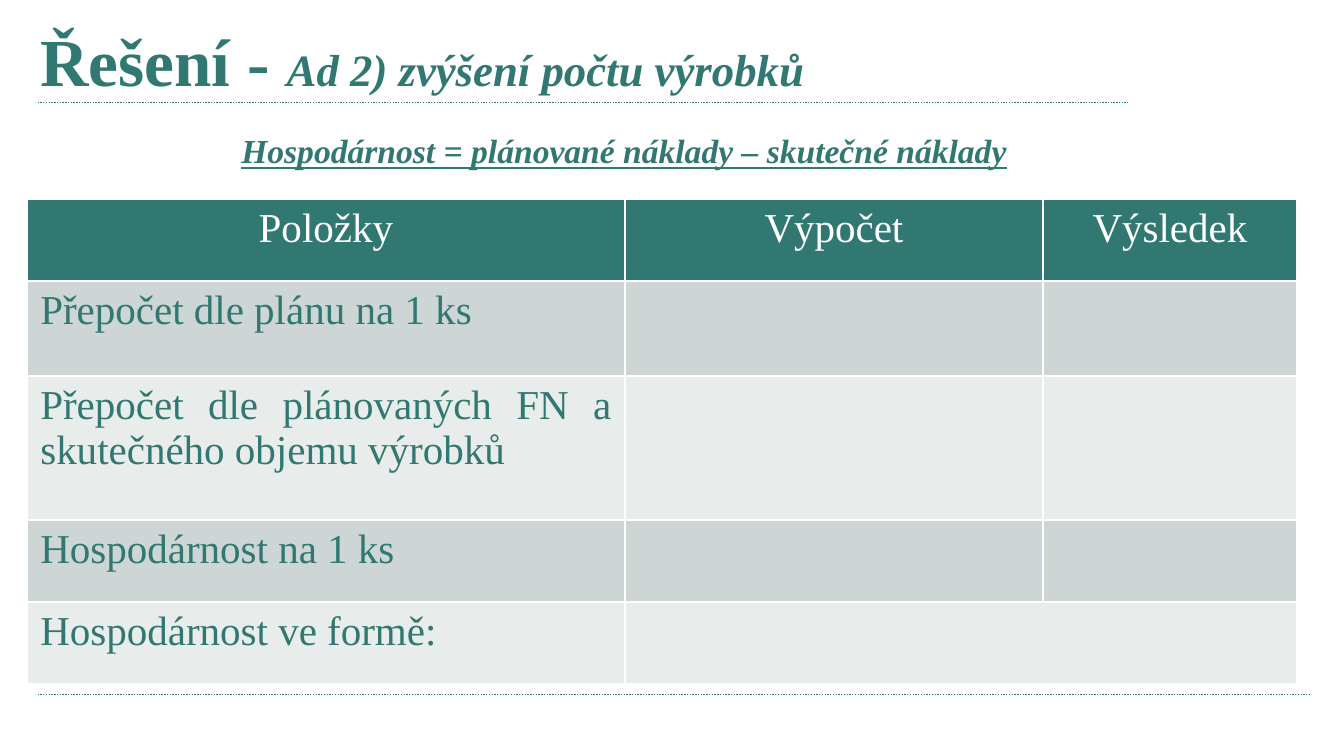
from dataclasses import dataclass

from lxml import etree
from pptx import Presentation
from pptx.dml.color import RGBColor
from pptx.enum.dml import MSO_LINE
from pptx.enum.shapes import MSO_CONNECTOR
from pptx.enum.text import MSO_ANCHOR, PP_ALIGN
from pptx.oxml.ns import qn
from pptx.util import Emu, Pt

DOTS = MSO_LINE.ROUND_DOT
STRAIGHT = MSO_CONNECTOR.STRAIGHT
MIDDLE = MSO_ANCHOR.MIDDLE
LEFT, CENTER, JUST = PP_ALIGN.LEFT, PP_ALIGN.CENTER, PP_ALIGN.JUSTIFY
SCALE = 4572


@dataclass(frozen=True)
class Theme:
    """Colours, font and type sizes of the slide."""
    font: str = "Times New Roman"
    teal: str = "307871"
    white: str = "FFFFFF"
    bands: tuple = ("CDD6D5", "E8ECEB")
    title: int = 36
    sub: int = 24
    note: int = 18
    cell: int = 22


THEME = Theme()
COLS = (890, 622, 378)
ROWS = (122, 142, 214, 122, 122)
HEADS = ("Položky", "Výpočet", "Výsledek")
ITEMS = (
    ("Přepočet dle plánu na 1 ks", JUST),
    ("Přepočet dle plánovaných FN a skutečného objemu výrobků", JUST),
    ("Hospodárnost na 1 ks", LEFT),
    ("Hospodárnost ve formě:", LEFT),
)


def px(num):
    """Turn px into EMU."""
    return Emu(num * SCALE)


def rgb(code):
    """Turn a hex code into a colour."""
    return RGBColor.from_string(code)


def write(para, text, size, color=THEME.teal, align=LEFT,
          bold=False, italic=False, under=False):
    """Add a formatted run to a paragraph."""
    para.alignment = align
    run = para.add_run()
    run.text = text
    font = run.font
    font.name, font.size = THEME.font, Pt(size)
    font.bold, font.italic, font.underline = bold, italic, under
    font.color.rgb = rgb(color)


def rule(slide, left, right, top):
    """Draw a dotted horizontal rule."""
    line = slide.shapes.add_connector(
        STRAIGHT, px(left), px(top), px(right), px(top))
    line.line.color.rgb = rgb(THEME.teal)
    line.line.width = Pt(0.75)
    line.line.dash_style = DOTS
    etree.SubElement(line._element.spPr, qn("a:effectLst"))


def head(slide):
    """Fill the title placeholder."""
    box = slide.shapes.title
    box.left, box.top, box.width, box.height = map(px, (40, 20, 1764, 158))
    frame = box.text_frame
    frame.vertical_anchor = MIDDLE
    frame.margin_bottom = px(30)
    para = frame.paragraphs[0]
    write(para, "Řešení - ", THEME.title, bold=True)
    write(para, "Ad 2) zvýšení počtu výrobků", THEME.sub,
          bold=True, italic=True)


def note(slide):
    """Add the formula under the title."""
    box = slide.shapes.add_textbox(*map(px, (86, 184, 1686, 80)))
    frame = box.text_frame
    frame.word_wrap = True
    frame.vertical_anchor = MIDDLE
    write(frame.paragraphs[0],
          "Hospodárnost = plánované náklady – skutečné náklady",
          THEME.note, align=CENTER, bold=True, italic=True, under=True)


def paint(cell, color):
    """Give a cell white borders and a fill."""
    props = cell._tc.get_or_add_tcPr()
    for side in ("lnL", "lnR", "lnT", "lnB"):
        edge = etree.SubElement(props, qn(f"a:{side}"), w=str(Pt(1)))
        fill = etree.SubElement(edge, qn("a:solidFill"))
        etree.SubElement(fill, qn("a:srgbClr"), val=THEME.white)
    cell.fill.solid()
    cell.fill.fore_color.rgb = rgb(color)


def grid(slide):
    """Build the table of items."""
    table = slide.shapes.add_table(
        len(ROWS), len(COLS), px(40), px(296),
        px(sum(COLS)), px(sum(ROWS))).table
    for col, width in zip(table.columns, COLS):
        col.width = px(width)
    for num, (row, height) in enumerate(zip(table.rows, ROWS)):
        row.height = px(height)
        for cell in row.cells:
            paint(cell, THEME.bands[(num - 1) % 2] if num else THEME.teal)
    for num, text in enumerate(HEADS):
        write(table.cell(0, num).text_frame.paragraphs[0], text,
              THEME.cell, color=THEME.white, align=CENTER)
    for num, (text, align) in enumerate(ITEMS, 1):
        write(table.cell(num, 0).text_frame.paragraphs[0], text,
              THEME.cell, align=align)
    last = len(ROWS) - 1
    table.cell(last, 1).merge(table.cell(last, 2))


def main():
    """Build and save the slide."""
    deck = Presentation()
    deck.slide_width, deck.slide_height = px(2000), px(1125)
    slide = deck.slides.add_slide(deck.slide_layouts[5])
    rule(slide, 56, 1678, 153)
    rule(slide, 56, 1950, 1034)
    head(slide)
    note(slide)
    grid(slide)
    deck.save("out.pptx")


if __name__ == "__main__":
    main()
